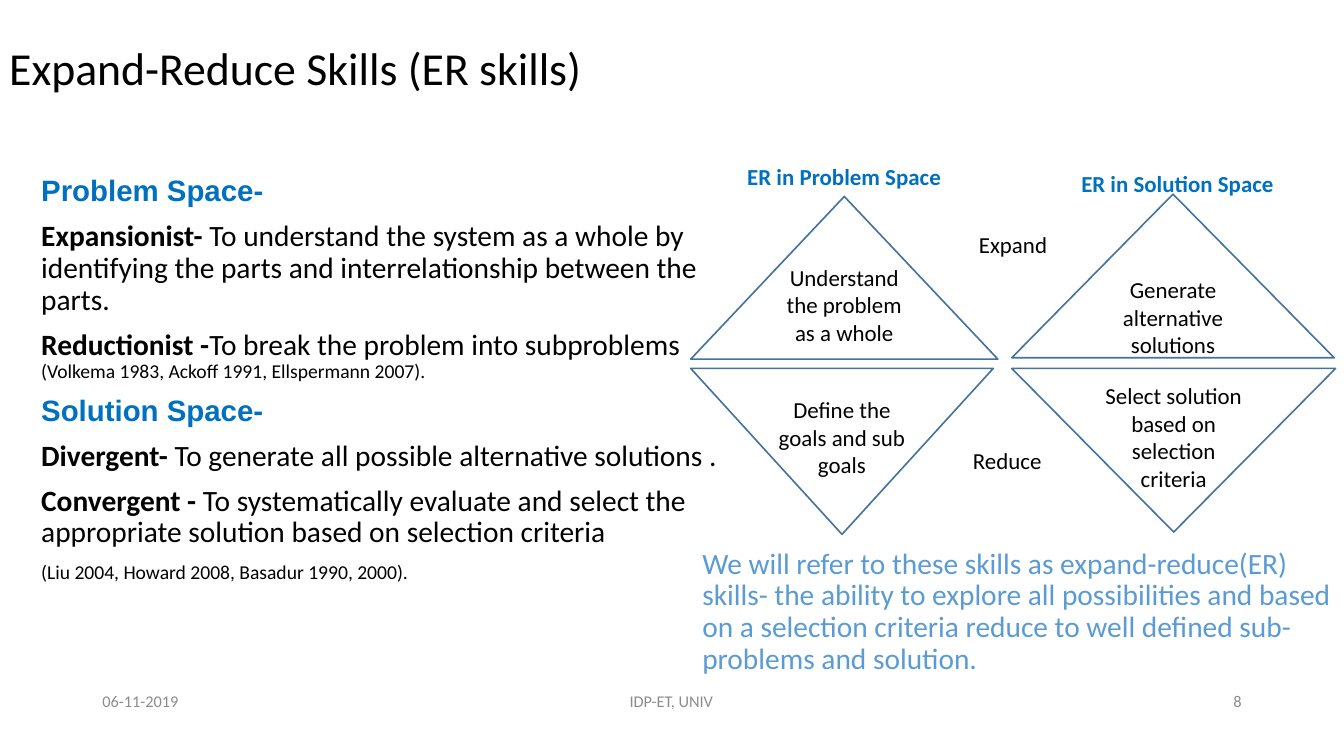
import pptx
import pptx.dml.color
import pptx.enum.shapes
import pptx.enum.text
import pptx.util

Cm = pptx.util.Cm
Pt = pptx.util.Pt
RGBColor = pptx.dml.color.RGBColor
Shape = pptx.enum.shapes.MSO_SHAPE
Align = pptx.enum.text.PP_ALIGN
Anchor = pptx.enum.text.MSO_ANCHOR

BLACK = RGBColor(0x00, 0x00, 0x00)
HEADING_BLUE = RGBColor(0x00, 0x70, 0xC0)
SUMMARY_BLUE = RGBColor(0x5B, 0x9B, 0xD5)
OUTLINE_BLUE = RGBColor(0x43, 0x73, 0x9E)
FOOTER_GREY = RGBColor(0x8C, 0x8C, 0x8C)


class SkillsPage:
    """Holds the text style and the slide being filled."""

    face = "Calibri"
    heading_face = "Arial"
    side_inset = 0.2
    edge_inset = 0.1

    def __init__(self, page):
        self.page = page

    def style(self, font, size, color=BLACK, bold=False, face=None):
        font.name = face or self.face
        font.size = Pt(size)
        font.bold = bold
        font.color.rgb = color

    def text_box(self, left, top, width, height, anchor=Anchor.TOP,
                 side=side_inset, edge=edge_inset):
        box = self.page.shapes.add_textbox(Cm(left), Cm(top), Cm(width), Cm(height))
        frame = box.text_frame
        frame.word_wrap = True
        frame.vertical_anchor = anchor
        frame.margin_left = frame.margin_right = Cm(side)
        frame.margin_top = frame.margin_bottom = Cm(edge)
        return frame

    def line(self, area, text, size, color=BLACK, bold=False,
             align=Align.LEFT, spacing=None, **box_style):
        para = self.text_box(*area, **box_style).paragraphs[0]
        para.text = text
        para.alignment = align
        para.line_spacing = spacing
        self.style(para.font, size, color, bold)

    def definitions(self, area, entries):
        frame = self.text_box(*area)
        for index, spans in enumerate(entries):
            para = frame.paragraphs[0] if index == 0 else frame.add_paragraph()
            para.line_spacing = 0.9
            para.space_before = Pt(8)
            if len(spans) == 1:
                text, look = spans[0]
                para.text = text
                self.style(para.font, **look)
                continue
            for text, look in spans:
                span = para.add_run()
                span.text = text
                self.style(span.font, **look)

    def triangle(self, kind, area, text, above=0.13, below=0.13):
        left, top, width, height = area
        triangle = self.page.shapes.add_shape(kind, Cm(left), Cm(top), Cm(width), Cm(height))
        triangle.shadow.inherit = False
        triangle.fill.background()
        triangle.line.color.rgb = OUTLINE_BLUE
        triangle.line.width = Pt(1)
        frame = triangle.text_frame
        frame.word_wrap = True
        frame.vertical_anchor = Anchor.MIDDLE
        frame.margin_top = Cm(above)
        frame.margin_bottom = Cm(below)
        para = frame.paragraphs[0]
        para.text = text
        para.alignment = Align.CENTER
        self.style(para.font, 14)


def main():
    deck = pptx.Presentation()
    deck.slide_width = Cm(29.01)
    deck.slide_height = Cm(15.88)
    skills = SkillsPage(deck.slides.add_slide(deck.slide_layouts[6]))

    # Title
    skills.line((0, 0, 25.02, 3.07), "Expand-Reduce Skills (ER skills)", 28,
                spacing=0.9, anchor=Anchor.MIDDLE)

    # Definitions of the skills
    heading = dict(size=18, color=HEADING_BLUE, bold=True, face=skills.heading_face)
    term = dict(size=18, bold=True)
    body = dict(size=18)
    citation = dict(size=12)
    skills.definitions((0.69, 3.71, 15.21, 10.46), [
        [("Problem Space-", heading)],
        [("Expansionist-", term),
         (" To understand the system as a whole by identifying the parts "
          "and interrelationship between the parts.", body)],
        [("Reductionist -", term),
         ("To break the problem into subproblems ", body),
         ("(Volkema 1983, Ackoff 1991, Ellspermann 2007).", citation)],
        [("Solution Space-", heading)],
        [("Divergent-", term),
         (" To generate all possible alternative solutions .", body)],
        [("Convergent -", term),
         (" To systematically evaluate and select the appropriate solution "
          "based on selection criteria", body)],
        [("(Liu 2004, Howard 2008, Basadur 1990, 2000).", citation)],
    ])

    # Expanding and reducing triangles
    expand, reduce = Shape.FLOWCHART_EXTRACT, Shape.FLOWCHART_MERGE
    skills.triangle(reduce, (14.91, 7.95, 6.53, 3.58),
                    "Define the goals and sub goals", above=1.31)
    skills.triangle(reduce, (21.84, 7.95, 6.99, 3.53),
                    "Select solution based on selection criteria", above=1.31)
    skills.triangle(expand, (14.91, 4.24, 6.63, 3.51),
                    "Understand the problem as a whole", below=0.72)
    skills.triangle(expand, (21.84, 4.19, 6.96, 3.53),
                    "Generate alternative solutions")

    # Diagram labels
    for left, top, width, text, color, bold in [
        (15.88, 3.38, 5.51, "ER in Problem Space", HEADING_BLUE, True),
        (23.09, 3.53, 5.51, "ER in Solution Space", HEADING_BLUE, True),
        (20.88, 4.85, 2.21, "Expand", BLACK, False),
        (20.75, 9.5, 2.24, "Reduce", BLACK, False),
    ]:
        skills.line((left, top, width, 0.86), text, 14, color, bold,
                    side=0.25, edge=0.13)

    # Summary
    skills.line((14.91, 11.71, 14.5, 3.1),
                "We will refer to these skills as expand-reduce(ER) skills- the ability "
                "to explore all possibilities and based on a selection criteria reduce "
                "to well defined sub-problems and solution.",
                18, SUMMARY_BLUE, spacing=0.9, side=0.25, edge=0.13)

    # Footer
    for left, width, text, align in [
        (2.01, 6.53, "06-11-2019", Align.LEFT),
        (9.6, 9.78, "IDP-ET, UNIV", Align.CENTER),
        (20.47, 6.53, "8", Align.RIGHT),
    ]:
        skills.line((left, 14.71, width, 0.84), text, 10, FOOTER_GREY,
                    align=align, anchor=Anchor.MIDDLE)

    deck.save("out.pptx")


if __name__ == "__main__":
    main()
